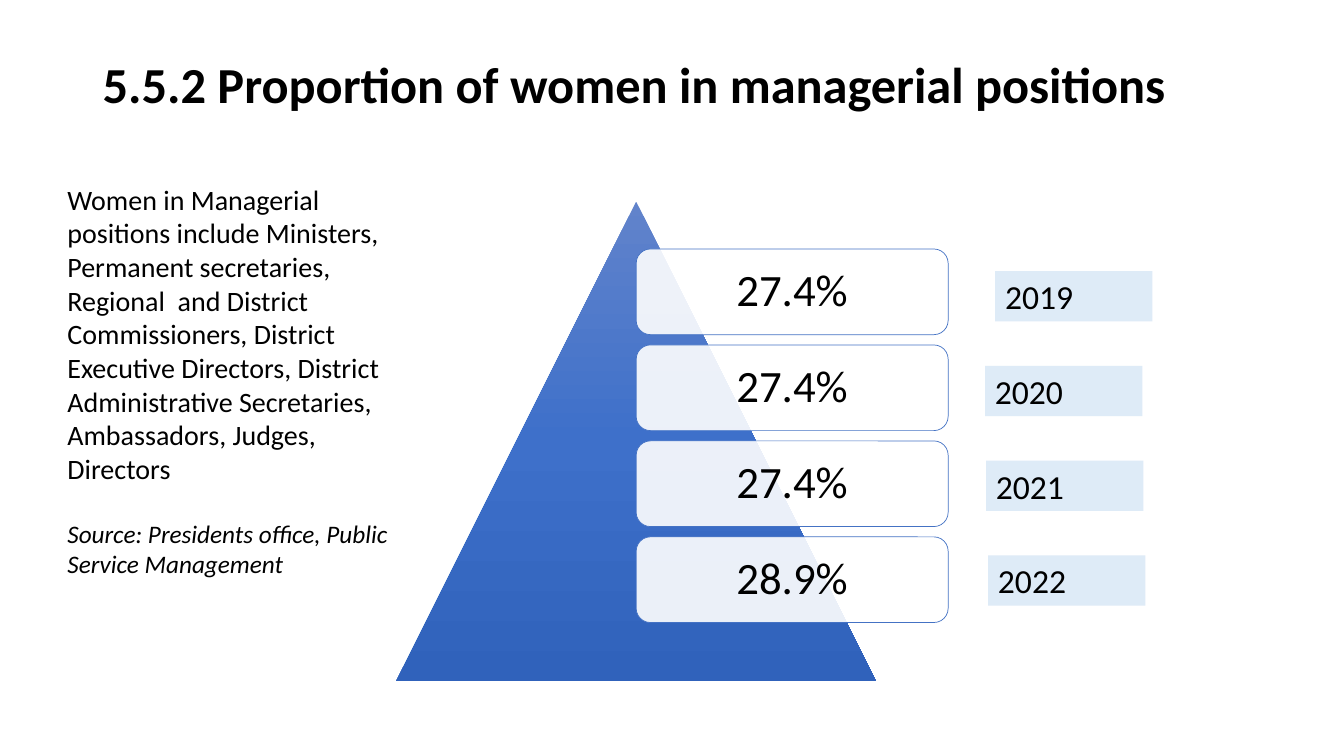
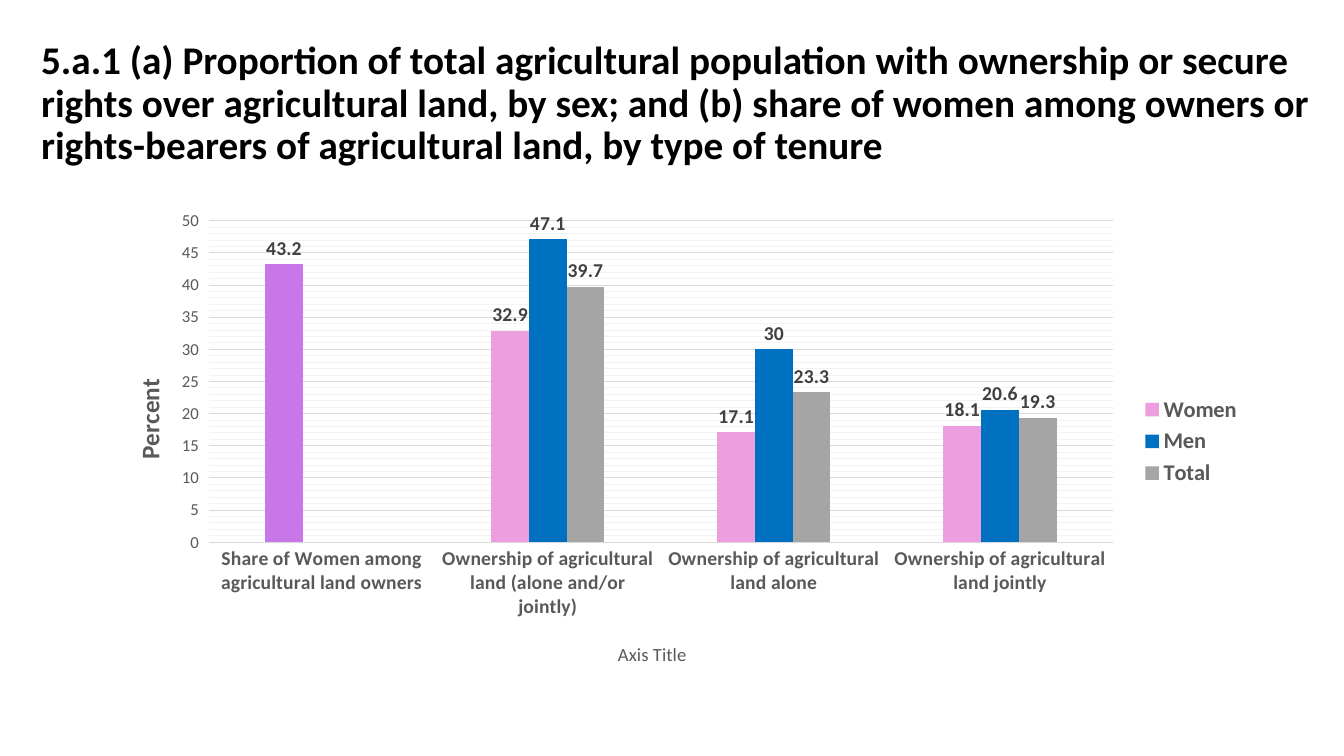
import copy
import lxml.etree
import pptx
import pptx.chart.data
import pptx.dml.color
import pptx.enum.chart
import pptx.enum.shapes
import pptx.enum.text
import pptx.oxml.ns
import pptx.util

Inches = pptx.util.Inches
Pt = pptx.util.Pt
qn = pptx.oxml.ns.qn
Shape = pptx.enum.shapes.MSO_SHAPE
Align = pptx.enum.text.PP_ALIGN
Anchor = pptx.enum.text.MSO_ANCHOR
Kind = pptx.enum.chart


class Theme:
    face = "Calibri"
    ink, white = "000000", "FFFFFF"
    edge, tag = "4472C4", "DEEBF7"
    fade = [(0, "6183CB"), (0.5, "3E70CA"), (1, "3062BB")]
    grey, dark = "595959", "404040"
    rule, faint = "D9D9D9", "F2F2F2"
    pink, violet, blue, total = "EC9EDE", "C777E8", "0070C0", "A5A5A5"
    head = {"size": Pt(36), "bold": True}
    long = {"size": Pt(28), "bold": True}
    body = {"size": Pt(20)}
    source = {"size": Pt(18), "italic": True}
    rate = {"size": Pt(32)}
    year = {"size": Pt(24)}
    tick = {"size": Pt(12), "bold": False}
    group = {"size": Pt(14), "bold": True}
    legend = {"size": Pt(16), "bold": True}
    percent = {"size": Pt(18), "bold": True}
    below = {"size": Pt(13.3), "bold": False}


def rgb(code):
    return pptx.dml.color.RGBColor.from_string(code)


def apply(item, values):
    for name, value in values.items():
        setattr(item, name, value)


def style(font, values, color=Theme.ink):
    apply(font, {"name": Theme.face, **values})
    font.color.rgb = rgb(color)


def write(shape, parts, frame=None, para=None):
    """Fill a shape with one paragraph for each (text, font values) pair."""
    text = shape.text_frame
    apply(text, {"word_wrap": True, **(frame or {})})
    for i, (words, values) in enumerate(parts):
        line = text.add_paragraph() if i else text.paragraphs[0]
        apply(line, para or {})
        run = line.add_run()
        run.text = words
        style(run.font, values)
    return text


def label(slide, box, parts, **formats):
    return write(slide.shapes.add_textbox(*map(Inches, box)), parts, **formats)


def title(slide, box, words, values):
    label(slide, box, [(words, values)],
          frame={"vertical_anchor": Anchor.MIDDLE}, para={"line_spacing": 0.9})


def block(slide, kind, box, fill=None, line=None):
    shape = slide.shapes.add_shape(kind, *map(Inches, box))
    shape.shadow.inherit = False
    if fill:
        shape.fill.solid()
        shape.fill.fore_color.rgb = rgb(fill)
    if line:
        shape.line.color.rgb = rgb(line)
        shape.line.width = Pt(0.5)
    else:
        shape.line.fill.background()
    return shape


def shade(shape, stops):
    """Give a shape a gradient that runs from top to bottom."""
    shape.fill.gradient()
    shape.fill.gradient_angle = 270
    group = shape._element.spPr.find(".//" + qn("a:gsLst"))
    while len(group) < len(stops):
        group.append(copy.deepcopy(group[0]))
    for stop, (place, color) in zip(shape.fill.gradient_stops, stops):
        stop.position = place
        stop.color.rgb = rgb(color)


def pyramid(slide, box, rates):
    left, top, width, height = box
    shade(block(slide, Shape.ISOSCELES_TRIANGLE, box), Theme.fade)
    step = height / 5
    for i, rate in enumerate(rates):
        spot = (left + width / 2, top + 0.47 + i * step, width * 0.65, 0.85)
        card = block(slide, Shape.ROUNDED_RECTANGLE, spot, Theme.white, Theme.edge)
        color = card._element.spPr.find(qn("a:solidFill"))[0]
        lxml.etree.SubElement(color, qn("a:alpha")).set("val", "90000")
        write(card, [(rate, Theme.rate)], {"vertical_anchor": Anchor.MIDDLE},
              {"alignment": Align.CENTER, "line_spacing": 0.9})


def years(slide, box, tags):
    """Stack year tags, each with its own shift from the left edge."""
    left, top, width, height = box
    for i, (year, shift) in enumerate(tags):
        spot = (left + shift, top + i * 0.94, width, height)
        tag = block(slide, Shape.RECTANGLE, spot, Theme.tag)
        write(tag, [(year, Theme.year)], {"vertical_anchor": Anchor.TOP},
              {"alignment": Align.LEFT})


def managers(slide):
    title(slide, (0.92, 0.4, 11.5, 0.92),
          "5.5.2 Proportion of women in managerial positions", Theme.head)
    pyramid(slide, (3.93, 2, 4.76, 4.76), ["27.4%", "27.4%", "27.4%", "28.9%"])
    years(slide, (9.77, 2.69, 1.56, 0.5),
          [("2019", 0.1), ("2020", 0), ("2021", 0.01), ("2022", 0.03)])
    text = label(slide, (0.57, 1.76, 3.66, 4.07), [
        ("Women in Managerial positions include Ministers, Permanent secretaries, "
         "Regional  and District Commissioners, District Executive Directors, "
         "District Administrative Secretaries, Ambassadors, Judges, Directors",
         Theme.body),
        ("Source: Presidents office, Public Service Management", Theme.source)])
    text.paragraphs[1].space_before = Pt(24)


def place(part, **values):
    """Set a manual layout, in shares of the chart, on a chart part."""
    old = part.find(qn("c:layout"))
    if old is not None:
        part.remove(old)
    frame = lxml.etree.Element(qn("c:layout"))
    manual = lxml.etree.SubElement(frame, qn("c:manualLayout"))
    for name, value in values.items():
        lxml.etree.SubElement(manual, qn("c:" + name)).set("val", str(value))
    part.insert(0 if part.find(qn("c:tx")) is None else 1, frame)


def name(axis, words, values, x, y):
    text = axis.axis_title.text_frame
    text.text = words
    style(text.paragraphs[0].runs[0].font, values, Theme.grey)
    place(axis.axis_title._element, xMode="edge", yMode="edge", x=x, y=y)


def stroke(line, color):
    line.color.rgb = rgb(color)
    line.width = Pt(0.75)


def grid(axis):
    """Show major gridlines, and minor ones in a fainter colour."""
    apply(axis, {"has_major_gridlines": True, "has_minor_gridlines": True})
    stroke(axis.major_gridlines.format.line, Theme.rule)
    major, minor = (axis._element.find(qn("c:" + part))
                    for part in ("majorGridlines", "minorGridlines"))
    minor.append(copy.deepcopy(major.find(qn("c:spPr"))))
    minor.find(".//" + qn("a:srgbClr")).set("val", Theme.faint)


def axes(chart):
    base, scale = chart.category_axis, chart.value_axis
    base.major_tick_mark = Kind.XL_TICK_MARK.NONE
    style(base.tick_labels.font, Theme.group, Theme.grey)
    stroke(base.format.line, Theme.rule)
    name(base, "Axis Title", Theme.below, 0.45, 0.91)
    apply(scale, {"minimum_scale": 0, "maximum_scale": 50, "major_unit": 5,
                  "minor_unit": 1})
    style(scale.tick_labels.font, Theme.tick, Theme.grey)
    scale.format.line.fill.background()
    grid(scale)
    name(scale, "Percent", Theme.percent, 0.03, 0.36)


def bars(slide, box, groups, series):
    data = pptx.chart.data.CategoryChartData()
    data.categories = groups
    for words, values, color in series:
        data.add_series(words, values)
    chart = slide.shapes.add_chart(
        Kind.XL_CHART_TYPE.COLUMN_CLUSTERED, *map(Inches, box), data).chart
    apply(chart, {"has_title": False, "has_legend": True})
    style(chart.font, {"size": Pt(10)})
    apply(chart.legend, {"position": Kind.XL_LEGEND_POSITION.RIGHT,
                         "include_in_layout": False})
    style(chart.legend.font, Theme.legend, Theme.grey)
    axes(chart)
    plot = chart.plots[0]
    apply(plot, {"gap_width": 300, "overlap": 0, "vary_by_categories": False})
    for item, (words, values, color) in zip(plot.series, series):
        item.format.fill.solid()
        item.format.fill.fore_color.rgb = rgb(color)
        apply(item.data_labels, {
            "show_value": True,
            "position": Kind.XL_LABEL_POSITION.OUTSIDE_END})
        style(item.data_labels.font, Theme.group, Theme.dark)
    share = plot.series[0].points[0].format.fill
    share.solid()
    share.fore_color.rgb = rgb(Theme.violet)
    place(chart._chartSpace.find(".//" + qn("c:plotArea")), layoutTarget="inner",
          xMode="edge", yMode="edge", x=0.1, y=0.04, w=0.78, h=0.67)


def land(slide):
    title(slide, (0.31, 0.31, 12.89, 1.45),
          "5.a.1 (a) Proportion of total agricultural population with ownership "
          "or secure rights over agricultural land, by sex; and (b) share of women "
          "among owners or rights-bearers of agricultural land, by type of tenure",
          Theme.long)
    bars(slide, (0.92, 2, 11.5, 4.76),
         ["Share of Women among agricultural land owners",
          "Ownership of agricultural land (alone and/or jointly)",
          "Ownership of agricultural land alone",
          "Ownership of agricultural land jointly"],
         [("Women", (43.2, 32.9, 17.1, 18.1), Theme.pink),
          ("Men", (None, 47.1, 30, 20.6), Theme.blue),
          ("Total", (None, 39.7, 23.3, 19.3), Theme.total)])


def main():
    deck = pptx.Presentation()
    apply(deck, {"slide_width": Inches(13.33), "slide_height": Inches(7.5)})
    for build in (managers, land):
        build(deck.slides.add_slide(deck.slide_layouts[6]))
    deck.save("out.pptx")


if __name__ == "__main__":
    main()
